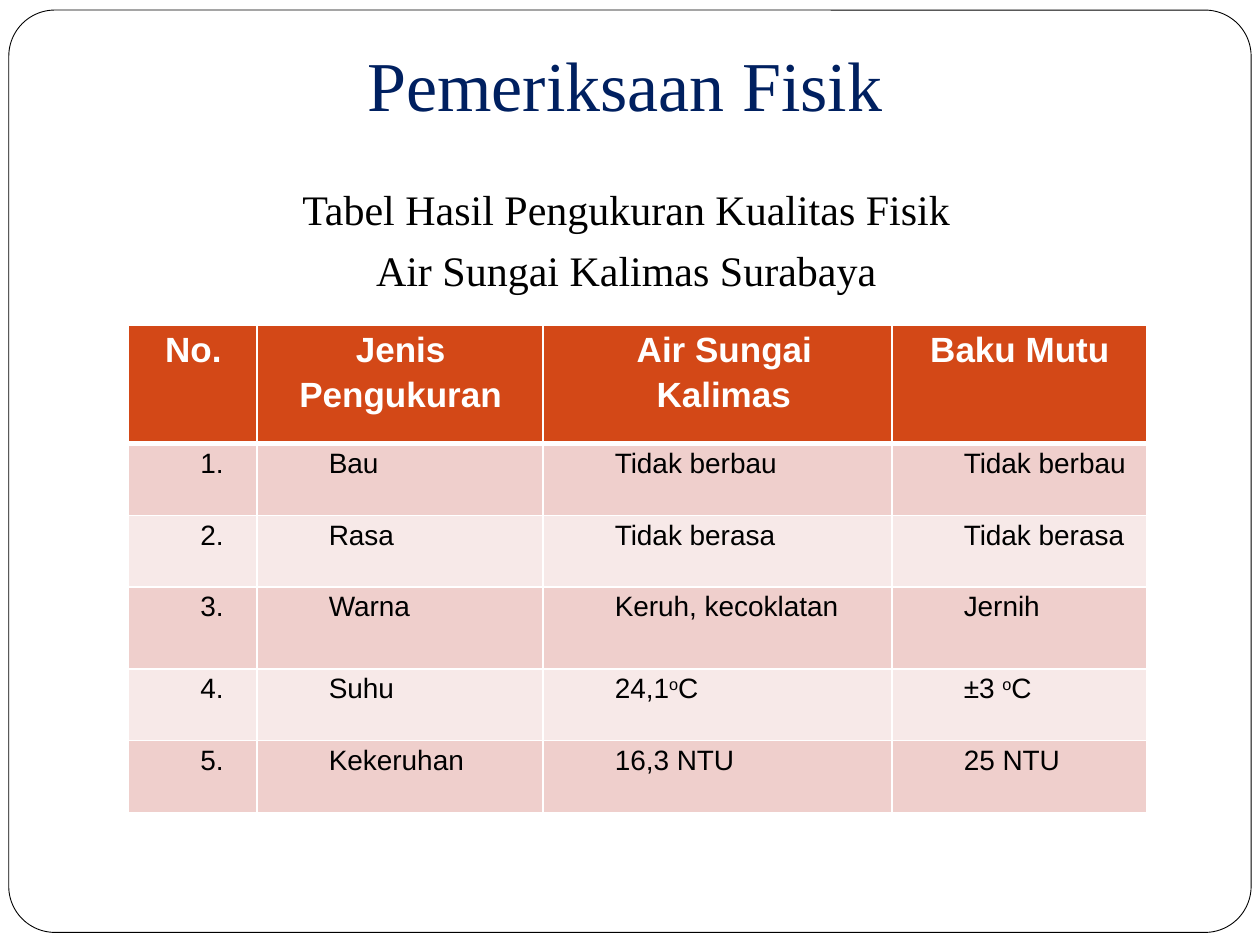
"""Builds the slide on physical test results for the Kalimas river."""
from dataclasses import dataclass
from typing import Any

from lxml.etree import SubElement as Sub
from pptx import Presentation
from pptx.dml.color import RGBColor as Rgb
from pptx.enum.shapes import MSO_SHAPE as Shape
from pptx.enum.text import MSO_ANCHOR as Anchor, PP_ALIGN as Align
from pptx.oxml.ns import qn
from pptx.util import Inches, Pt


@dataclass(frozen=True)
class Theme:
    white: str = "FFFFFF"
    ink: str = "000000"
    navy: str = "002060"
    head: str = "D34817"
    bands: tuple[str, str] = ("EFCFCC", "F7E9E8")
    serif: str = "Times New Roman"
    sans: str = "Arial"
    title: int = 40
    sub: int = 24
    label: int = 20
    body: int = 16


@dataclass(frozen=True)
class Box:
    x: float
    y: float
    w: float
    h: float

    def place(self) -> list[int]:
        return [unit(n) for n in (self.x, self.y, self.w, self.h)]


@dataclass(frozen=True)
class Style:
    font: str
    size: int
    color: str
    align: Align = Align.CENTER
    bold: bool = False
    indent: float = 0
    first: float = 0
    form: tuple[tuple[str, Any], ...] = ()


THEME = Theme()
COLS, ROWS = 100, 75
WIDTH = Inches(10)
FRAME = Box(0.7, 0.8, 98.6, 73.2)
TITLE = Box(5.3, 1.7, 90, 9.3)
SUB = Box(7.8, 14.1, 83.8, 46.2)
GRID = Box(10.2, 25.8, 80.8, 38.7)
SPANS = (10.2, 22.7, 27.7, 20.2)
DEPTHS = (9.4, 5.7, 5.7, 6.5, 5.7, 5.7)
DATA = (
    ("No.", "Jenis Pengukuran", "Air Sungai Kalimas", "Baku Mutu"),
    ("1.", "Bau", "Tidak berbau", "Tidak berbau"),
    ("2.", "Rasa", "Tidak berasa", "Tidak berasa"),
    ("3.", "Warna", "Keruh, kecoklatan", "Jernih"),
    ("4.", "Suhu", "24,1^o^C", "±3 ^o^C"),
    ("5.", "Kekeruhan", "16,3 NTU", "25 NTU"),
)


def unit(n: float) -> int:
    """Turn a count of grid columns into a length."""
    return round(WIDTH * n / COLS)


def put(item: Any, form: dict[str, Any]) -> None:
    """Set each named value on the item."""
    for name, value in form.items():
        setattr(item, name, value)


def write(para: Any, text: str, style: Style) -> None:
    """Fill a paragraph, raising the parts held between carets."""
    put(para, {"alignment": style.align, **dict(style.form)})
    props = para._p.get_or_add_pPr()
    props.set("marL", str(unit(style.indent)))
    props.set("indent", str(unit(style.first)))
    for i, part in enumerate(text.split("^")):
        run = para.add_run()
        run.text = part
        put(run.font, {"name": style.font, "size": Pt(style.size), "bold": style.bold})
        run.font.color.rgb = Rgb.from_string(style.color)
        if i % 2:
            run._r.get_or_add_rPr().set("baseline", "30000")


def add_text(slide: Any, box: Box, lines: tuple[str, ...], style: Style,
             form: dict[str, Any]) -> None:
    """Add a text box with one paragraph for each line."""
    frame = slide.shapes.add_textbox(*box.place()).text_frame
    put(frame, {"word_wrap": True, **form})
    for i, line in enumerate(lines):
        para = frame.add_paragraph() if i else frame.paragraphs[0]
        write(para, line, style)
        if i:
            para.space_before = Pt(5.8)


def add_frame(slide: Any, box: Box) -> None:
    """Add the rounded border of the slide."""
    card = slide.shapes.add_shape(Shape.ROUNDED_RECTANGLE, *box.place())
    card.adjustments[0] = 0.05
    card.shadow.inherit = False
    card.fill.solid()
    card.fill.fore_color.rgb = Rgb.from_string(THEME.white)
    card.line.color.rgb = Rgb.from_string(THEME.ink)
    card.line.width = Pt(0.5)


def edge(cell: Any, widths: dict[str, float]) -> None:
    """Draw white cell borders of the given widths."""
    props = cell._tc.get_or_add_tcPr()
    for side, width in widths.items():
        line = Sub(props, qn(f"a:ln{side}"), w=str(Pt(width)))
        Sub(Sub(line, qn("a:solidFill")), qn("a:srgbClr"), val=THEME.white)


def cell_style(row: int, col: int) -> Style:
    """Choose the text style for a place in the table."""
    form = (("line_spacing", 1.15),)
    if row == 0:
        shift = (1, 0.1) if col == 2 else (0.1, 0)
        form += (("space_after", Pt(10 if col == 3 else 0)),)
        return Style(THEME.sans, THEME.label, THEME.white, Align.CENTER, True,
                     *shift, form)
    align = Align.LEFT if col == 3 else Align.JUSTIFY
    return Style(THEME.sans, THEME.body, THEME.ink, align, False, 5, 0, form)


def add_grid(slide: Any, box: Box) -> None:
    """Add the table of results."""
    table = slide.shapes.add_table(len(DATA), len(SPANS), *box.place()).table
    put(table, {"first_row": False, "horz_banding": False})
    for col, span in zip(table.columns, SPANS):
        col.width = unit(span)
    for row, depth in zip(table.rows, DEPTHS):
        row.height = unit(depth)
    pads = {"margin_left": unit(0.7), "margin_right": unit(0.7),
            "margin_top": 0, "margin_bottom": 0}
    for r, words in enumerate(DATA):
        for c, text in enumerate(words):
            cell = table.cell(r, c)
            put(cell, pads)
            edge(cell, {"L": 1, "R": 1, "T": 3 if r == 1 else 1, "B": 1 if r else 3})
            cell.fill.solid()
            tint = THEME.bands[(r - 1) % 2] if r else THEME.head
            cell.fill.fore_color.rgb = Rgb.from_string(tint)
            write(cell.text_frame.paragraphs[0], text, cell_style(r, c))


def main() -> None:
    """Build and save the slide."""
    deck = Presentation()
    put(deck, {"slide_width": WIDTH, "slide_height": unit(ROWS)})
    slide = deck.slides.add_slide(deck.slide_layouts[6])
    add_frame(slide, FRAME)
    add_text(slide, TITLE, ("Pemeriksaan Fisik ",),
             Style(THEME.serif, THEME.title, THEME.navy),
             {"vertical_anchor": Anchor.BOTTOM, "margin_bottom": unit(1)})
    add_grid(slide, GRID)
    add_text(slide, SUB,
             ("Tabel Hasil Pengukuran Kualitas Fisik", "Air Sungai Kalimas Surabaya"),
             Style(THEME.serif, THEME.sub, THEME.ink, indent=3, first=-3),
             {"vertical_anchor": Anchor.TOP})
    deck.save("out.pptx")


if __name__ == "__main__":
    main()
